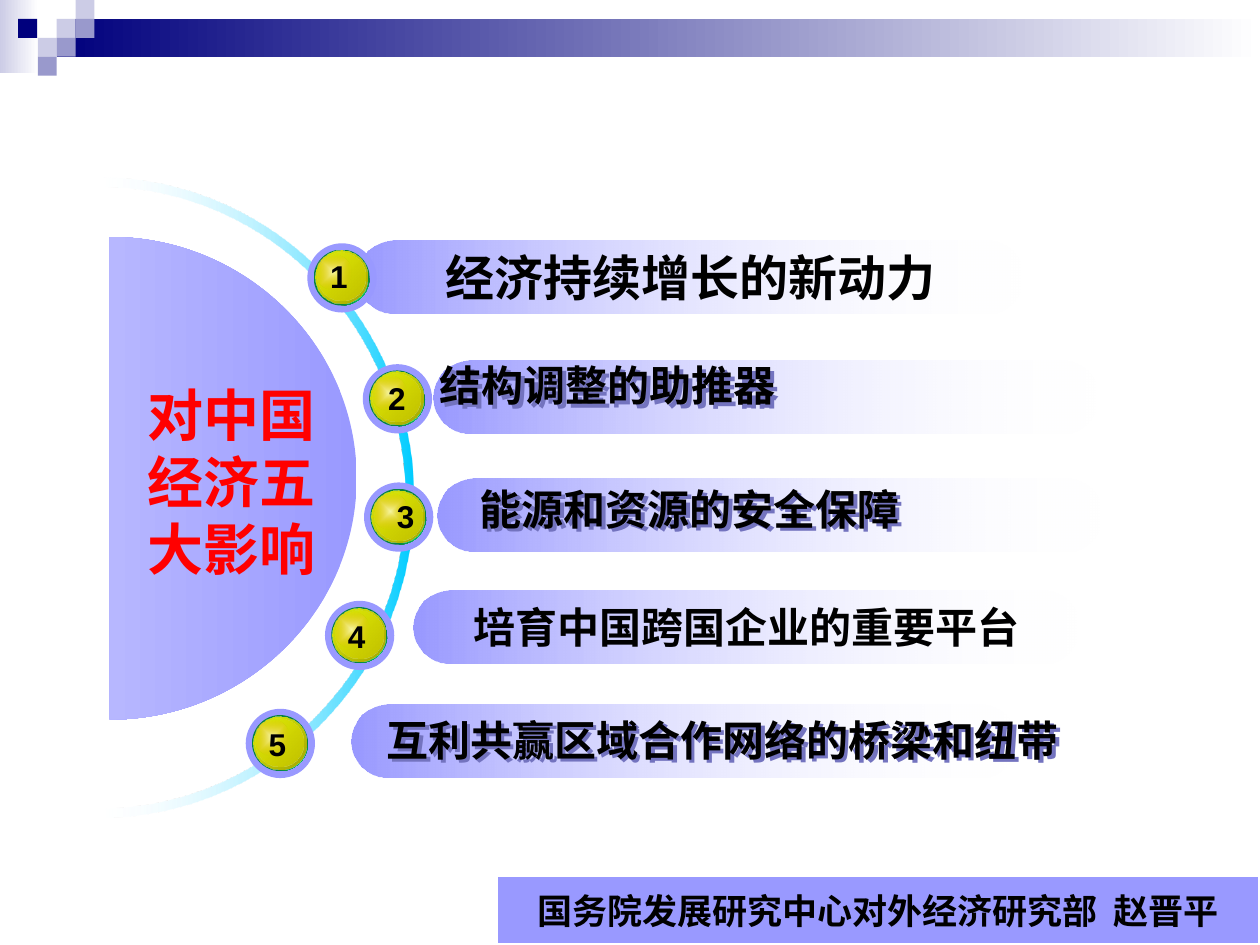
from lxml import etree
from pptx import Presentation
from pptx.dml.color import RGBColor
from pptx.enum.shapes import MSO_SHAPE
from pptx.enum.text import MSO_ANCHOR, PP_ALIGN
from pptx.oxml import parse_xml
from pptx.oxml.ns import nsdecls, qn
from pptx.util import Pt

RECTANGLE, OVAL = MSO_SHAPE.RECTANGLE, MSO_SHAPE.OVAL
ROUNDED = MSO_SHAPE.ROUNDED_RECTANGLE
LEFT, CENTER, RIGHT = PP_ALIGN.LEFT, PP_ALIGN.CENTER, PP_ALIGN.RIGHT
TOP, MIDDLE = MSO_ANCHOR.TOP, MSO_ANCHOR.MIDDLE
CJK = "Noto Sans CJK SC"
ACROSS = '<a:lin ang="0" scaled="0"/>'
DOWN = '<a:lin ang="5400000" scaled="0"/>'
DIAGONAL = '<a:lin ang="2700000" scaled="0"/>'
CORNER = '<a:path path="rect"><a:fillToRect l="100000" t="100000"/></a:path>'
RADIAL = ('<a:path path="shape"><a:fillToRect l="50000" t="50000" '
          'r="50000" b="50000"/></a:path>')


def paint(shape, colors, direction=ACROSS):
    shape.shadow.inherit = False
    shape.line.fill.background()
    shape.fill.solid()
    shape.fill.fore_color.rgb = RGBColor.from_string(colors[0][:6])
    if len(colors) > 1:
        stops = ""
        for index, color in enumerate(colors):
            value, _, alpha = color.partition("/")
            position = 100000 * index // (len(colors) - 1)
            stops += (f'<a:gs pos="{position}"><a:srgbClr val="{value}">'
                      f'<a:alpha val="{alpha or 100}000"/></a:srgbClr></a:gs>')
        gradient = parse_xml(f'<a:gradFill {nsdecls("a")} rotWithShape="1">'
                             f'<a:gsLst>{stops}</a:gsLst>{direction}</a:gradFill>')
        properties = shape._element.spPr
        properties.replace(properties.find(qn("a:solidFill")), gradient)


def write(shape, text, size, font, alignment=CENTER, anchor=MIDDLE, wrap=True,
          color="000000"):
    frame = shape.text_frame
    frame.word_wrap = wrap
    frame.vertical_anchor = anchor
    paragraph = frame.paragraphs[0]
    paragraph.alignment = alignment
    run = paragraph.add_run()
    run.text = text
    run.font.size = Pt(size)
    run.font.bold = True
    run.font.name = font
    run.font.color.rgb = RGBColor.from_string(color)
    etree.SubElement(run._r.get_or_add_rPr(), qn("a:ea")).set("typeface", CJK)


presentation = Presentation()
presentation.slide_width, presentation.slide_height = Pt(720), Pt(540)
slide = presentation.slides.add_slide(presentation.slide_layouts[6])
shapes = slide.shapes

for left, top, width, height, *colors in (
    (0, 0, 22, 41.8, "CCCCE6", "FFFFFF"),
    (32.4, 10.8, 687.6, 21.6, "00007D", "FFFFFF"),
    (32.4, 10.8, 10.8, 10.8, "CCCCE6"),
    (43.2, 0, 10.8, 10.8, "CCCCE6"),
    (43.2, 10.8, 10.8, 10.8, "9999CC"),
    (21.6, 21.6, 10.8, 10.8, "CCCCE6"),
    (10.4, 10.8, 10.8, 10.8, "00007D"),
    (32.4, 21.6, 10.8, 10.8, "9999CC"),
    (21.6, 32.4, 10.8, 10.8, "9999CC"),
):
    shape = shapes.add_shape(RECTANGLE, Pt(left), Pt(top), Pt(width), Pt(height))
    paint(shape, colors)

BEND = 0.55
HALF_CIRCLE = ((-1, 0), (-1, -BEND), (-BEND, -1), (0, -1), (BEND, -1), (1, -BEND), (1, 0))
for center, base, bottom, radii, colors in (
    (62.3, 272.9, 414.8, [(137.9, 141.1)], ("9999FF", "D8D8FF")),
    (53.3, 281.5, 467.3, [(182.9, 180), (177.5, 175)], ("00CCFF", "FFFFFF/0", "00CCFF")),
):
    points = []
    for radius_x, radius_y in radii:
        points = points[::-1] + [(100 * (center + radius_x * x), 100 * (base + radius_y * y))
                                 for x, y in HALF_CIRCLE]
    builder = shapes.build_freeform(points[0][0], 100 * bottom, scale=Pt(1) / 100)
    builder.move_to(*points[0])
    builder.add_line_segments(points[1:], close=True)
    shape = builder.convert_to_shape()
    segments = list(shape._element.iter(qn("a:lnTo")))
    for start in range(0, len(segments), 7):
        for first in (start, start + 3):
            curve = etree.Element(qn("a:cubicBezTo"))
            segments[first].addprevious(curve)
            for segment in segments[first:first + 3]:
                curve.append(segment[0])
                segment.getparent().remove(segment)
    shape.rotation = 90
    paint(shape, colors, DOWN)

BALL_LAYERS = (
    (0, 0, 39.6, ["9999FF"], ACROSS),
    (3.6, 3.6, 32, ["10E470", "098340"], CORNER),
    (4.4, 4.4, 30.2, ["FFFF00/85", "A2A200"], DIAGONAL),
    (5, 6.4, 20.2, ["FFFFFF", "E9940B/0"], RADIAL),
    (5.8, 5.6, 27.4, ["FFFF00/0", "C2C200"], DIAGONAL),
)
ROWS = (
    (204.5, 137.3, 175.6, 139, 181.4, 143.3, "经济持续增长的新动力", 28, CJK, None),
    (247.7, 205.9, 207.3, 208.1, 214.6, 213.1, "结构调整的助推器", 24, CJK, (244.1, 202)),
    (249.8, 273.4, 208, 275.7, 219.6, 280.5, "能源和资源的安全保障", 24, "Arial", (267.1, 272.7)),
    (236.4, 337.4, 185.7, 343.3, 191.5, 348.8, "培育中国跨国企业的重要平台", 24, "Arial", None),
    (200.9, 402.5, 140.4, 405, 146.2, 410.7, "互利共赢区域合作网络的桥梁和纽带", 24, CJK, (213.8, 404.6)),
)
for number, row in enumerate(ROWS, 1):
    bar_left, bar_top, ball_left, ball_top, digit_left, digit_top = row[:6]
    label, size, font, label_place = row[6:]
    bar = shapes.add_shape(ROUNDED, Pt(bar_left), Pt(bar_top), Pt(380.2), Pt(41.8))
    bar.adjustments[0] = 0.5
    paint(bar, ["9999FF", "FFFFFF/0"])
    for left, top, diameter, colors, direction in BALL_LAYERS:
        ball = shapes.add_shape(OVAL, Pt(ball_left + left), Pt(ball_top + top),
                                Pt(diameter), Pt(diameter))
        paint(ball, colors, direction)
    digit = shapes.add_textbox(Pt(digit_left), Pt(digit_top), Pt(24.5), Pt(29))
    write(digit, str(number), 18, "Arial", anchor=TOP, wrap=False)
    if label_place:
        left, top = label_place
        text_box = shapes.add_textbox(Pt(left), Pt(top), Pt(414), Pt(36.5))
        write(text_box, label, size, font, LEFT, TOP)
        text_box._element.spPr.append(parse_xml(
            f'<a:effectLst {nsdecls("a")}><a:outerShdw dist="35921" dir="2700000" '
            'algn="ctr" rotWithShape="0"><a:srgbClr val="7373BF"/>'
            '</a:outerShdw></a:effectLst>'))
    else:
        write(bar, label, size, font, wrap=False)

heading = shapes.add_textbox(Pt(56.2), Pt(213.8), Pt(131), Pt(124))
write(heading, "对中国经济五大影响", 32, CJK, RIGHT, TOP, color="FF0000")

footer = shapes.add_shape(RECTANGLE, Pt(283.7), Pt(500.4), Pt(436.3), Pt(39.6))
paint(footer, ["9999FF"])
footer.line.color.rgb = RGBColor.from_string("FFFFFF")
footer.line.width = Pt(2)
write(footer, "国务院发展研究中心对外经济研究部  赵晋平", 20, CJK)

presentation.save("out.pptx")
